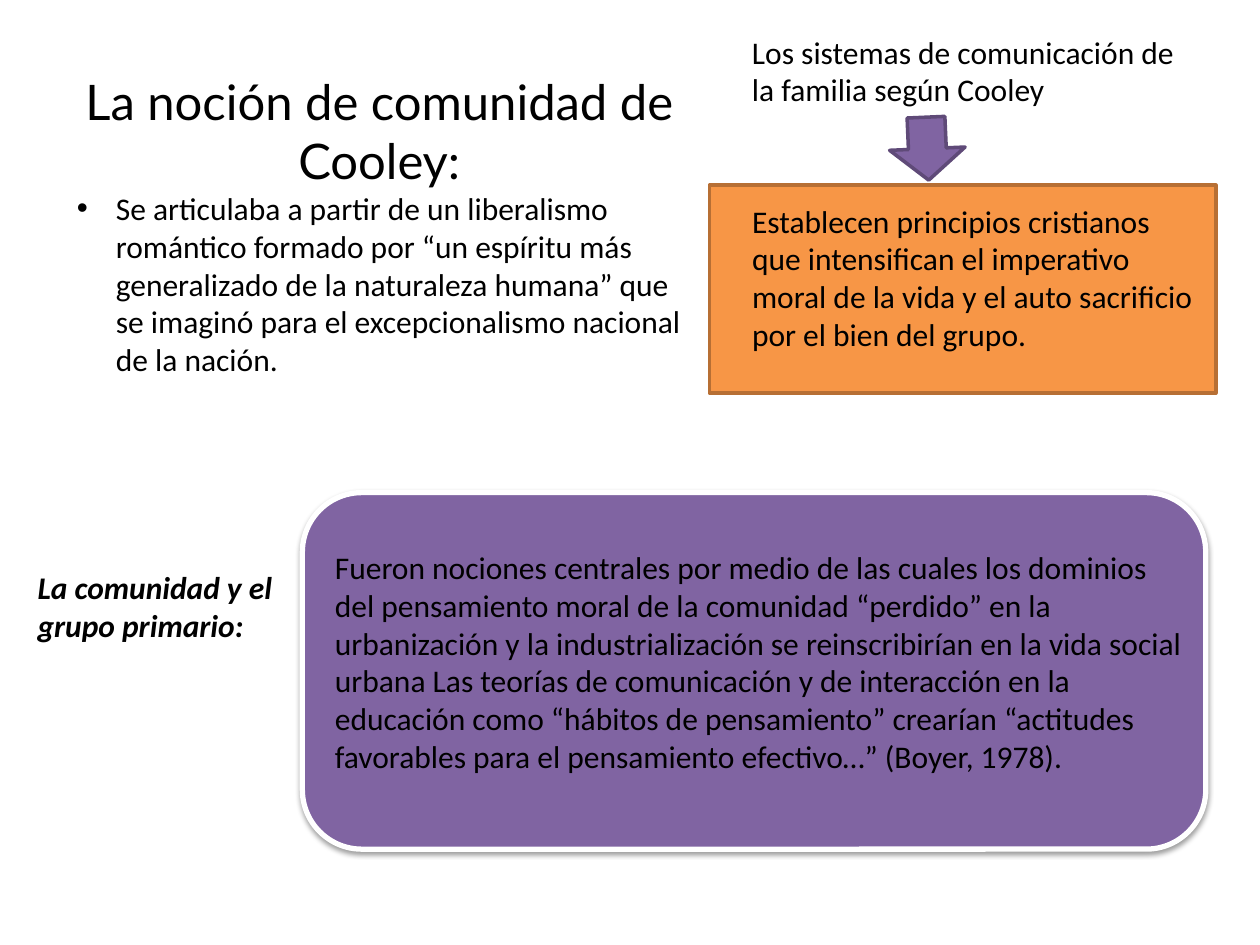
from dataclasses import dataclass

from lxml import etree
from pptx import Presentation
from pptx import util as u
from pptx.dml.color import RGBColor
from pptx.enum import shapes, text
from pptx.oxml import ns

COLORS = {
    "text": "000000",
    "orange": "F79646",
    "orange_line": "B76F34",
    "purple": "8064A2",
    "purple_line": "5F4A78",
    "white": "FFFFFF",
}


@dataclass
class Box:
    left: float
    top: float
    width: float
    height: float


@dataclass
class Panel:
    box: Box
    preset: shapes.MSO_SHAPE
    fill: str
    line: str
    line_width: float
    rotation: float = 0


@dataclass
class Label:
    box: Box
    wording: str
    emphasis: bool = False


PRINCIPLES_PANEL = Panel(Box(5.63, 1.47, 4.02, 1.65), shapes.MSO_SHAPE.RECTANGLE,
                         "orange", "orange_line", 2)
NOTIONS_PANEL = Panel(Box(2.4, 3.91, 7.17, 2.83), shapes.MSO_SHAPE.ROUNDED_RECTANGLE,
                      "purple", "white", 3)
ARROW = Panel(Box(7.11, 0.88, 0.5, 0.6), shapes.MSO_SHAPE.RIGHT_ARROW,
              "purple", "purple_line", 2, 87.5)

TITLE = Label(Box(0.51, 0.52, 5, 0.98), "La noción de comunidad de Cooley:")
BODY = Label(
    Box(0.51, 1.45, 5, 1.63),
    "Se articulaba a partir de un liberalismo romántico formado por “un espíritu más "
    "generalizado de la naturaleza humana” que se imaginó para el excepcionalismo "
    "nacional de la nación.",
)
LABELS = [
    Label(
        Box(5.87, 1.55, 3.78, 1.31),
        "Establecen principios cristianos que intensifican el imperativo moral de la vida "
        "y el auto sacrificio por el bien del grupo.",
    ),
    Label(
        Box(2.56, 4.3, 6.93, 1.92),
        "Fueron nociones centrales por medio de las cuales los dominios del pensamiento "
        "moral de la comunidad “perdido” en la urbanización y la industrialización se "
        "reinscribirían en la vida social urbana Las teorías de comunicación y de "
        "interacción en la educación como “hábitos de pensamiento” crearían “actitudes "
        "favorables para el pensamiento efectivo…” (Boyer, 1978).",
    ),
    Label(Box(5.87, 0.21, 3.7, 0.71),
          "Los sistemas de comunicación de la familia según Cooley"),
    Label(Box(0.2, 4.46, 2.13, 0.71), "La comunidad y el grupo primario:", True),
]


def color(name: str) -> RGBColor:
    return RGBColor.from_string(COLORS[name])


def lengths(box: Box) -> list[u.Length]:
    return [u.Inches(value) for value in (box.left, box.top, box.width, box.height)]


def draw_panel(slide, panel: Panel):
    shape = slide.shapes.add_shape(panel.preset, *lengths(panel.box))
    shape.rotation = panel.rotation
    shape.fill.solid()
    shape.fill.fore_color.rgb = color(panel.fill)
    shape.line.color.rgb = color(panel.line)
    shape.line.width = u.Pt(panel.line_width)
    shape.shadow.inherit = False
    return shape


def add_shadow(shape) -> None:
    effects = shape._element.spPr.find(ns.qn("a:effectLst"))
    shadow = etree.SubElement(
        effects, ns.qn("a:outerShdw"), blurRad=str(u.Pt(3.1)), dist=str(u.Pt(1.6)),
        dir="5400000", rotWithShape="0")
    shade = etree.SubElement(shadow, ns.qn("a:srgbClr"), val=COLORS["text"])
    etree.SubElement(shade, ns.qn("a:alpha"), val="38000")


def write_text(shape, label: Label, size: float = 18, font: str = "Calibri"):
    shape.left, shape.top, shape.width, shape.height = lengths(label.box)
    frame = shape.text_frame
    frame.word_wrap = True
    frame.auto_size = text.MSO_AUTO_SIZE.NONE
    frame.vertical_anchor = text.MSO_ANCHOR.TOP
    frame.text = label.wording
    paragraph = frame.paragraphs[0]
    paragraph.space_before = u.Pt(0)
    paragraph.font.size = u.Pt(size)
    paragraph.font.name = font
    paragraph.font.color.rgb = color("text")
    if label.emphasis:
        paragraph.font.bold = True
        paragraph.font.italic = True
    return paragraph


def main() -> None:
    presentation = Presentation()
    presentation.slide_width = u.Inches(10)
    presentation.slide_height = u.Inches(7.5)
    slide = presentation.slides.add_slide(presentation.slide_layouts[1])

    draw_panel(slide, PRINCIPLES_PANEL)
    add_shadow(draw_panel(slide, NOTIONS_PANEL))

    title = write_text(slide.shapes.title, TITLE, 28, "Lato")
    title.alignment = text.PP_ALIGN.CENTER
    body = write_text(slide.placeholders[1], BODY)
    indent = u.Inches(0.31)
    properties = body._p.get_or_add_pPr()
    properties.set("marL", str(indent))
    properties.set("indent", str(-indent))

    for label in LABELS:
        write_text(slide.shapes.add_textbox(*lengths(label.box)), label)
    draw_panel(slide, ARROW)

    presentation.save("out.pptx")


if __name__ == "__main__":
    main()
